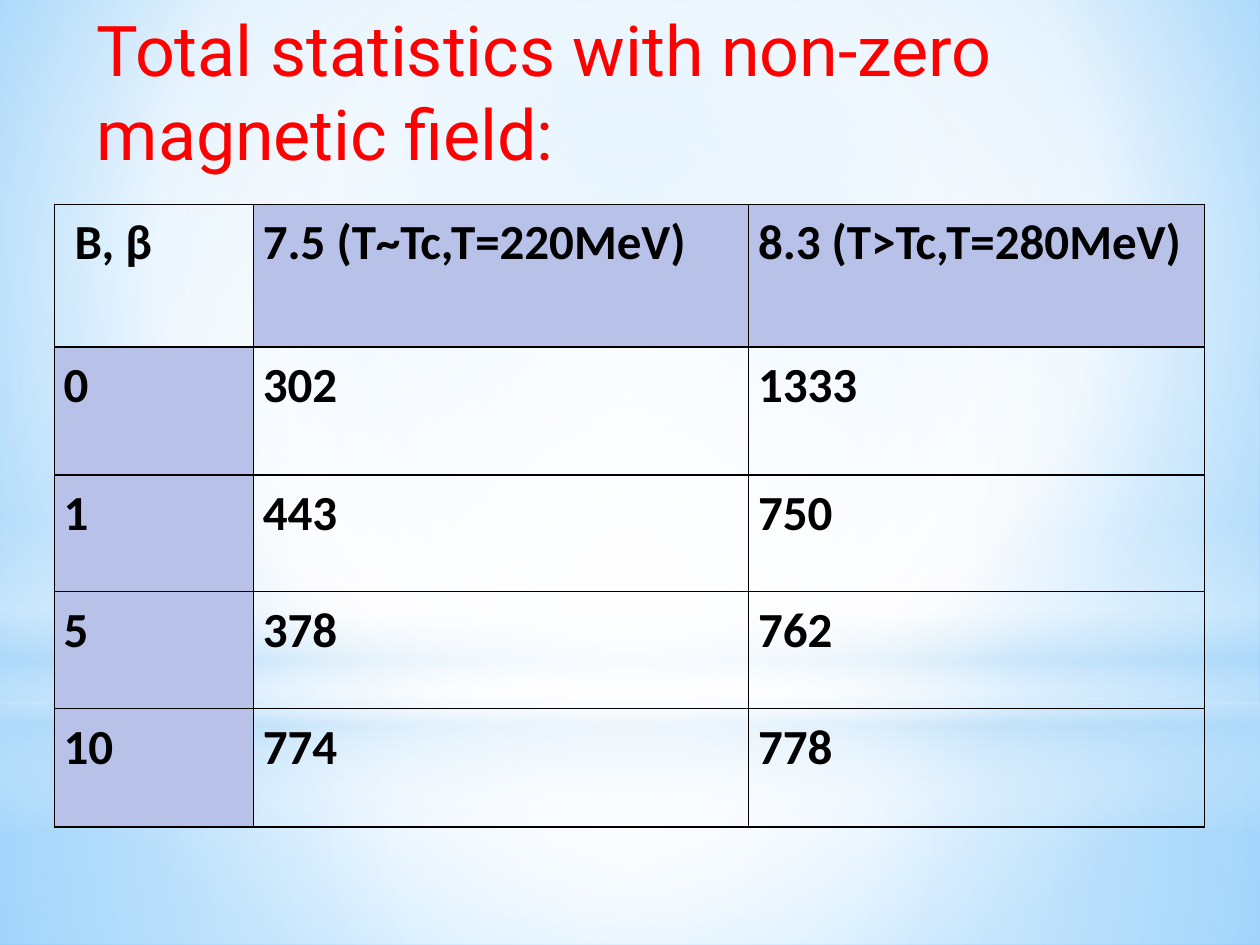
from lxml import etree
from pptx import Presentation
from pptx.dml.color import RGBColor
from pptx.enum.shapes import MSO_SHAPE
from pptx.oxml.ns import qn
from pptx.util import Pt

RECT, OVAL = MSO_SHAPE.RECTANGLE, MSO_SHAPE.OVAL
COLORS = {"white": "FFFFFF", "pale": "B4DCFA", "sky": "9ED5FF",
          "blue": "5BB9FF", "head": "B8C2E9", "ink": "000000", "title": "FF0000"}
WIDE = 720
MID = (50, 50, 50, 50)
GLOWS = [
    (RECT, 401.76, 138.24, [(0, "white", 91), (37, "white", 76), (100, "pale", 79)], MID),
    (RECT, 0, 401.76, [(0, "white", 89), (48, "white", 62), (100, "pale", 79)], MID),
    (RECT, 296.64, 180, [(0, "white", 0), (29, "white", 30), (45, "pale", 40),
                         (55, "white", 26), (65, "pale", 60), (100, "white", 0)], None),
    (OVAL, 126, 401.76, [(0, "white", 100), (56, "white", 0)], MID),
]
COLS = [113.8, 283, 260.6]
ROWS = [81.4, 73.4, 66.4, 67, 67.7]
STATS = [
    [" B, β", "7.5 (T~Tc,T=220MeV)", "8.3 (T>Tc,T=280MeV)"],
    ["0", "302", "1333"],
    ["1", "443", "750"],
    ["5", "378", "762"],
    ["10", "774", "778"],
]


def add_node(root, tag, **attrs):
    """Append a child element with the given attributes."""
    return etree.SubElement(root, qn(tag), {k: str(v) for k, v in attrs.items()})


def set_grad(holder, stops, focus):
    """Swap the solid fill of a holder for a radial or vertical gradient."""
    solid = holder.find(qn("a:solidFill"))
    grad = etree.Element(qn("a:gradFill"), rotWithShape="1")
    steps = add_node(grad, "a:gsLst")
    for pos, name, alpha in stops:
        stop = add_node(steps, "a:gs", pos=pos * 1000)
        color = add_node(stop, "a:srgbClr", val=COLORS[name])
        if alpha < 100:
            add_node(color, "a:alpha", val=alpha * 1000)
    if focus:
        route = add_node(grad, "a:path", path="circle")
        add_node(route, "a:fillToRect", **{k: v * 1000 for k, v in zip("ltrb", focus)})
    else:
        add_node(grad, "a:lin", ang=5400000, scaled=0)
    holder.replace(solid, grad)


def set_back(slide):
    """Give the slide its radial blue background."""
    slide.background.fill.solid()
    stops = [(0, "sky", 100), (60, "white", 100), (100, "blue", 100)]
    set_grad(slide.element.find(".//" + qn("p:bgPr")), stops, (20, 10, 20, 60))


def add_glow(slide, kind, top, high, stops, focus):
    """Add a full-width shape with a soft gradient."""
    shape = slide.shapes.add_shape(kind, Pt(0), Pt(top), Pt(WIDE), Pt(high))
    shape.shadow.inherit = False
    shape.line.fill.background()
    shape.fill.solid()
    set_grad(shape.element.spPr, stops, focus)


def add_run(para, text, font, size, color, bold=False):
    """Add a styled run to a paragraph."""
    run = para.add_run()
    run.text = text
    run.font.name, run.font.size, run.font.bold = font, Pt(size), bold
    run.font.color.rgb = RGBColor.from_string(COLORS[color])


def set_edges(cell):
    """Draw thin lines on all sides of a cell."""
    props = cell._tc.get_or_add_tcPr()
    for spot, side in enumerate("LRTB"):
        line = etree.Element(qn("a:ln" + side), w=str(Pt(1)))
        fill = add_node(line, "a:solidFill")
        add_node(fill, "a:srgbClr", val=COLORS["ink"])
        props.insert(spot, line)


def fill_cell(cell, text, shaded):
    """Set the text, fill and edges of a cell."""
    cell.margin_left = cell.margin_right = Pt(5.4)
    cell.margin_top = cell.margin_bottom = Pt(0)
    para = cell.text_frame.paragraphs[0]
    para.line_spacing = 1.15
    add_run(para, text, "Calibri", 28, "ink", True)
    if shaded:
        cell.fill.solid()
        cell.fill.fore_color.rgb = RGBColor.from_string(COLORS["head"])
    else:
        cell.fill.background()
    set_edges(cell)


def add_stats(slide):
    """Add the table of statistics, shading one header row and column."""
    frame = slide.shapes.add_table(len(ROWS), len(COLS), Pt(31), Pt(116.8),
                                   Pt(sum(COLS)), Pt(sum(ROWS)))
    table = frame.table
    table.first_row = table.horz_banding = False
    for col, wide in zip(table.columns, COLS):
        col.width = Pt(wide)
    for r, (row, high) in enumerate(zip(table.rows, ROWS)):
        row.height = Pt(high)
        for c, text in enumerate(STATS[r]):
            fill_cell(table.cell(r, c), text, (r == 0) != (c == 0))


def add_title(slide, text):
    """Add the wrapped slide title."""
    box = slide.shapes.add_textbox(Pt(48.2), Pt(0), Pt(550), Pt(104.4))
    box.text_frame.word_wrap = True
    add_run(box.text_frame.paragraphs[0], text, "Roboto", 40, "title")


def main():
    """Build and save the slide."""
    deck = Presentation()
    deck.slide_width, deck.slide_height = Pt(WIDE), Pt(540)
    slide = deck.slides.add_slide(deck.slide_layouts[6])
    set_back(slide)
    for glow in GLOWS:
        add_glow(slide, *glow)
    add_stats(slide)
    add_title(slide, "Total statistics with non-zero magnetic field:")
    deck.save("out.pptx")


if __name__ == "__main__":
    main()
